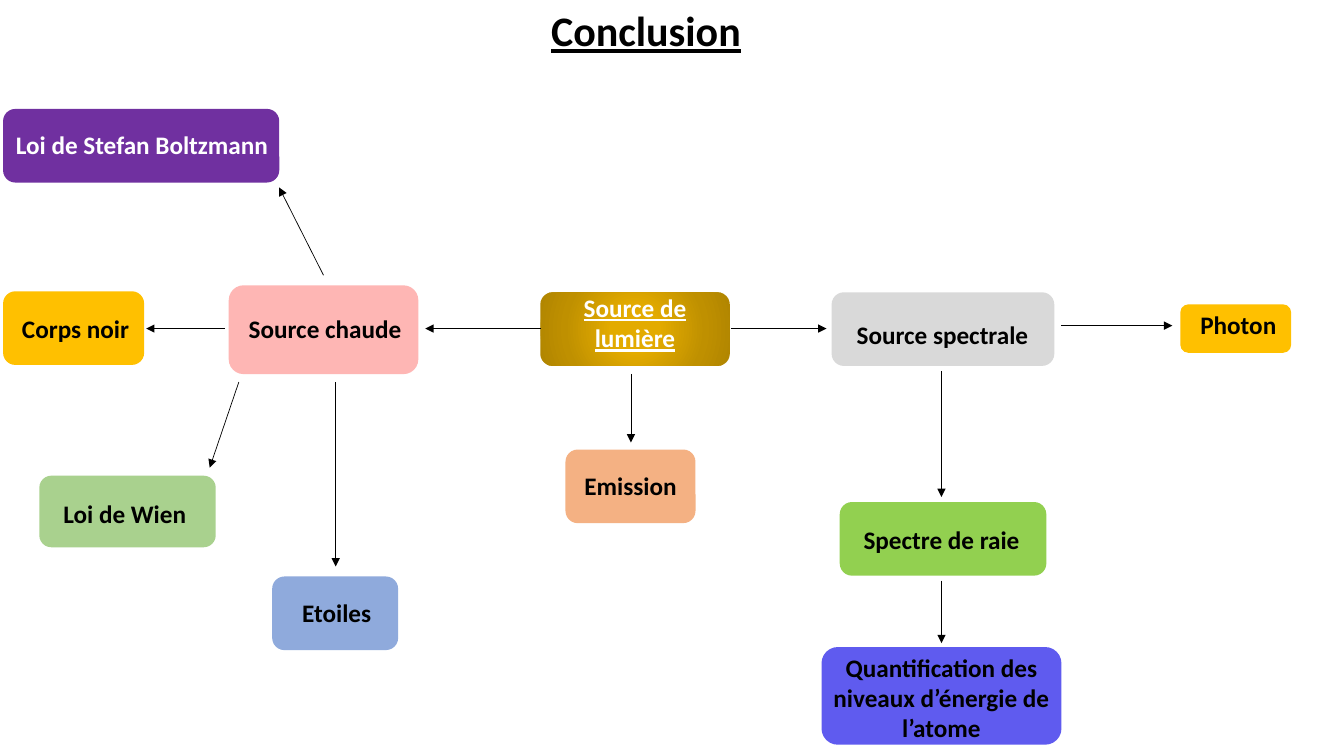
from lxml import etree
from pptx import Presentation
from pptx.dml.color import RGBColor
from pptx.enum import shapes, text
from pptx.oxml import parse_xml
from pptx.oxml.ns import nsdecls, qn
from pptx.util import Pt

COLOURS = {
    "black": "000000", "white": "FFFFFF", "purple": "7030A0", "gold": "E3AB00",
    "blue": "8FAADC", "orange": "F4B183", "sage": "A9D18E", "pink": "FEB6B4",
    "amber": "FFC000", "grey": "D9D9D9", "green": "92D050", "violet": "5F5BEF",
}
GOLD_STOPS = [(0, "E3AB00"), (23, "E3AB00"), (69, "BF9000"), (97, "B28600")]
LINE_HEIGHT = 28.8

prs = Presentation()
prs.slide_width, prs.slide_height = Pt(960), Pt(540)
slide = prs.slides.add_slide(prs.slide_layouts[6])


def rgb(name):
    return RGBColor.from_string(COLOURS[name])


def add_label(wording, left, top, width, height, size=18, colour="black",
              underline=False, align=text.PP_ALIGN.LEFT):
    label = slide.shapes.add_textbox(Pt(left), Pt(top), Pt(width), Pt(height))
    label.text_frame.word_wrap = True
    paragraph = label.text_frame.paragraphs[0]
    paragraph.alignment = align
    run = paragraph.add_run()
    run.text = wording
    run.font.name = "Calibri"
    run.font.size = Pt(size)
    run.font.bold = True
    run.font.underline = underline
    run.font.color.rgb = rgb(colour)


add_label("Conclusion", 386.6, 0, 296.6, 44, size=30, underline=True)

# Concept, fill, box (left, top, width, height), label (left, top, width)
concepts = [
    ("Loi de Stefan Boltzmann", "purple", (2.2, 77.8, 197.3, 52.6), (4.3, 88.6, 311.8)),
    ("Source de lumière", "gold", (385.9, 208.8, 135.4, 52.6), (396, 205.2, 115.2)),
    ("Etoiles", "blue", (194.4, 411.8, 90, 52.6), (208.8, 423.4, 100.8)),
    ("Emission", "orange", (403.9, 321.1, 92.9, 52.6), (410.4, 332.6, 142.6)),
    ("Loi de Wien", "sage", (28.1, 339.8, 126, 51.1), (38.2, 352.1, 145.4)),
    ("Source chaude", "pink", (163.4, 203.8, 135.4, 63.4), (170.6, 220.3, 138.2)),
    ("Corps noir", "amber", (2.2, 208.1, 100.8, 52.6), (8.6, 220.3, 94.3)),
    ("Photon", "amber", (843.1, 217.4, 79.2, 34.6), (850.3, 217.4, 79.2)),
    ("Source spectrale", "grey", (594, 208.8, 159.1, 52.6), (604.8, 224.6, 142.6)),
    ("Spectre de raie", "green", (599.8, 358.6, 147.6, 52.6), (609.8, 370.8, 132.5)),
    ("Quantification des niveaux d’énergie de l’atome", "violet",
     (586.8, 462.2, 171.4, 69.8), (565.9, 462.2, 213.1)),
]
label_styles = {
    "purple": {"colour": "white"},
    "gold": {"colour": "white", "underline": True,
             "align": text.PP_ALIGN.CENTER, "height": 51.1},
    "violet": {"align": text.PP_ALIGN.CENTER, "height": 72.7},
}

for wording, fill, box_place, label_place in concepts:
    box = slide.shapes.add_shape(shapes.MSO_SHAPE.ROUNDED_RECTANGLE,
                                 *(Pt(length) for length in box_place))
    box.shadow.inherit = False
    box.fill.solid()
    box.fill.fore_color.rgb = rgb(fill)
    box.line.fill.background()
    if fill == "gold":
        stops = "".join(f'<a:gs pos="{pos * 1000}"><a:srgbClr val="{stop}"/></a:gs>'
                        for pos, stop in GOLD_STOPS)
        radial = parse_xml(
            f'<a:gradFill {nsdecls("a")} rotWithShape="1"><a:gsLst>{stops}</a:gsLst>'
            '<a:path path="circle"><a:fillToRect l="50000" t="50000" r="50000" b="50000"/>'
            '</a:path></a:gradFill>')
        properties = box.element.spPr
        properties.replace(properties.find(qn("a:solidFill")), radial)
    style = {"height": LINE_HEIGHT, **label_styles.get(fill, {})}
    add_label(wording, *label_place, **style)

# Start x, start y, end x, end y
arrows = [
    (386.6, 234.7, 303.8, 234.7),  # lumière to chaude
    (522, 234.7, 590.4, 234.7),  # lumière to spectrale
    (450.7, 267.1, 450.7, 316.1),  # lumière to Emission
    (231.1, 196.6, 199.4, 133.9),  # chaude to Stefan Boltzmann
    (160.6, 234.7, 104.4, 234.7),  # chaude to Corps noir
    (170.6, 272.9, 149.8, 334.1),  # chaude to Wien
    (239.8, 272.9, 239.8, 404.6),  # chaude to Etoiles
    (758.2, 232.6, 837.4, 232.6),  # spectrale to Photon
    (672.5, 265, 672.5, 355),  # spectrale to Spectre de raie
    (672.5, 414.7, 672.5, 459.4),  # Spectre de raie to Quantification
]
for ends in arrows:
    arrow = slide.shapes.add_connector(shapes.MSO_CONNECTOR.STRAIGHT,
                                       *(Pt(length) for length in ends))
    arrow.line.color.rgb = rgb("black")
    arrow.line.width = Pt(0.5)
    properties = arrow.element.spPr
    etree.SubElement(properties.find(qn("a:ln")), qn("a:tailEnd"), type="triangle")
    etree.SubElement(properties, qn("a:effectLst"))

prs.save("out.pptx")
